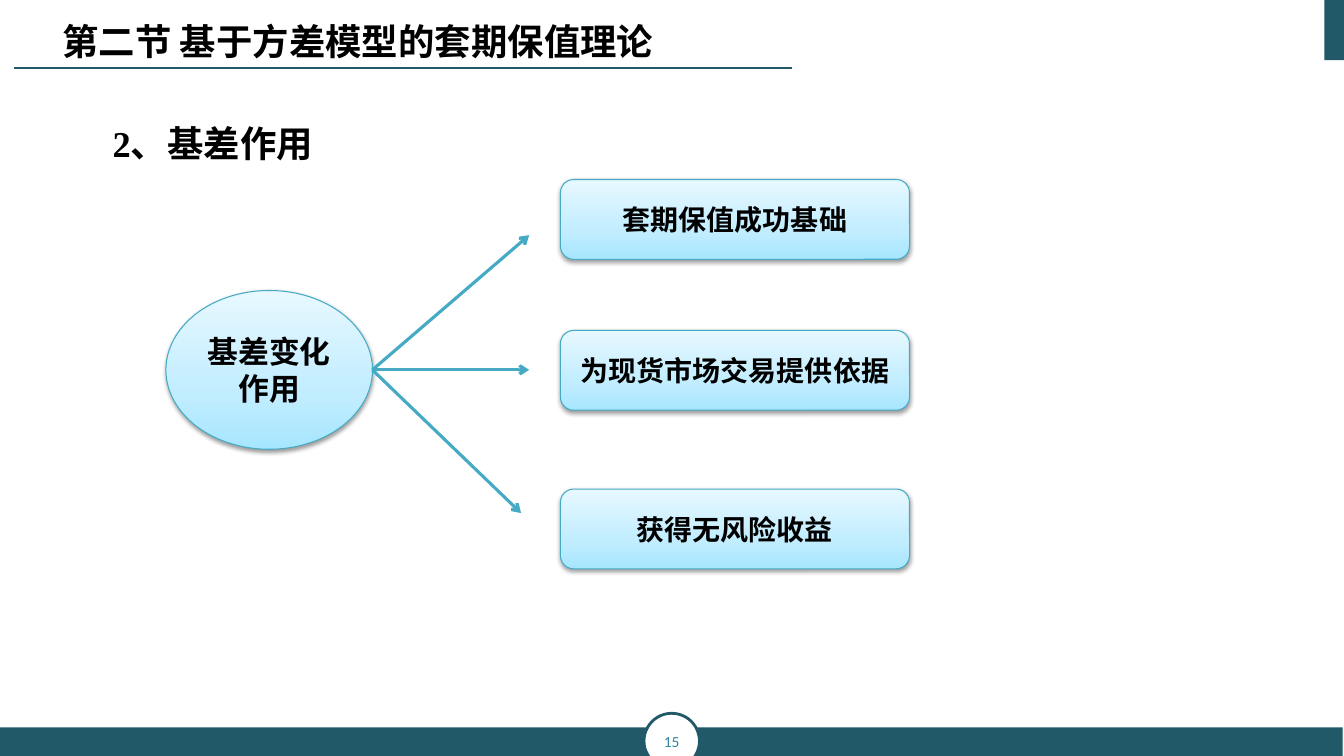
from copy import deepcopy

from lxml.etree import SubElement
from pptx import Presentation
from pptx.dml.color import RGBColor
from pptx.enum.shapes import MSO_CONNECTOR, MSO_SHAPE
from pptx.enum.text import MSO_ANCHOR, MSO_AUTO_SIZE, PP_ALIGN
from pptx.oxml.ns import qn
from pptx.util import Pt

TEAL = RGBColor(0x21, 0x59, 0x68)
NUMBER_TEAL = RGBColor(0x31, 0x85, 0x9C)
EDGE = RGBColor(0x46, 0xAA, 0xC5)
BLACK = RGBColor(0, 0, 0)
WHITE = RGBColor(0xFF, 0xFF, 0xFF)
GRADIENT = [(0, RGBColor(0xA7, 0xE6, 0xFF)),
            (0.35, RGBColor(0xC1, 0xED, 0xFF)),
            (1, RGBColor(0xE7, 0xF8, 0xFF))]
LATIN, SERIF, CJK = "Calibri", "Times New Roman", "Noto Sans CJK SC"


class SlideBuilder:
    def __init__(self, slide):
        self.slide = slide
        self.shapes = slide.shapes

    def set_text(self, sp, text, size, font=LATIN, color=BLACK, bold=True,
                 frame=None, paragraph=None):
        tf = sp.text_frame
        for name, value in {"word_wrap": True, **(frame or {})}.items():
            setattr(tf, name, value)
        p = tf.paragraphs[0]
        for name, value in (paragraph or {}).items():
            setattr(p, name, value)
        r = p.add_run()
        r.text = text
        for name, value in {"name": font, "size": Pt(size), "bold": bold}.items():
            setattr(r.font, name, value)
        r.font.color.rgb = color
        return p

    def title(self, text, box, size):
        sp = self.shapes.title
        for name, value in zip(("left", "top", "width", "height"), box):
            setattr(sp, name, Pt(value))
        p = self.set_text(sp, text, size, CJK,
                          frame={"auto_size": MSO_AUTO_SIZE.NONE,
                                 "vertical_anchor": MSO_ANCHOR.MIDDLE},
                          paragraph={"alignment": PP_ALIGN.LEFT})
        r_pr = p.runs[0]._r.get_or_add_rPr()
        SubElement(r_pr, qn("a:ea"), typeface=CJK)

    def heading(self, text, box, size):
        sp = self.shapes.add_textbox(*map(Pt, box))
        p = self.set_text(sp, text, size, SERIF, frame={"margin_top": Pt(7.2)},
                          paragraph={"line_spacing": 1.5})
        p._p.get_or_add_pPr().set("indent", str(Pt(36)))

    def shape(self, kind, box, fill, line=None, width=0):
        sp = self.shapes.add_shape(kind, *map(Pt, box))
        sp.shadow.inherit = False
        if fill is not None:
            sp.fill.solid()
            sp.fill.fore_color.rgb = fill
        if line is None:
            sp.line.fill.background()
        else:
            sp.line.color.rgb = line
            sp.line.width = Pt(width)
        return sp

    def label(self, sp, text, size, **style):
        self.set_text(sp, text, size, frame={"vertical_anchor": MSO_ANCHOR.MIDDLE},
                      paragraph={"alignment": PP_ALIGN.CENTER}, **style)

    def node(self, kind, box, text, size):
        sp = self.shape(kind, box, None, EDGE, 0.75)
        # Three-stop gradient, darkest at the bottom
        sp.fill.gradient()
        sp.fill.gradient_angle = 90
        first = sp._element.spPr.find(".//" + qn("a:gs"))
        first.addnext(deepcopy(first))
        for stop, (position, color) in zip(sp.fill.gradient_stops, GRADIENT):
            stop.position = position
            stop.color.rgb = color
        # Soft shadow below
        effects = sp._element.spPr.find(qn("a:effectLst"))
        shadow = SubElement(effects, qn("a:outerShdw"), blurRad=str(Pt(3.1)),
                            dist=str(Pt(1.6)), dir="5400000", rotWithShape="0")
        black = SubElement(shadow, qn("a:srgbClr"), val=str(BLACK))
        SubElement(black, qn("a:alpha"), val="38000")
        self.label(sp, text, size)

    def line(self, start, end, color, width, arrow=False):
        cx = self.shapes.add_connector(MSO_CONNECTOR.STRAIGHT, *map(Pt, start + end))
        cx.line.color.rgb = color
        cx.line.width = Pt(width)
        sp_pr = cx._element.spPr
        if arrow:
            SubElement(sp_pr.find(qn("a:ln")), qn("a:tailEnd"), type="arrow")
        SubElement(sp_pr, qn("a:effectLst"))


def main():
    prs = Presentation()
    prs.slide_width, prs.slide_height = Pt(960), Pt(540)
    s = SlideBuilder(prs.slides.add_slide(prs.slide_layouts[5]))

    # Page frame and number
    s.shape(MSO_SHAPE.RECTANGLE, (946, 0, 14, 43), TEAL)
    s.shape(MSO_SHAPE.RECTANGLE, (0, 519.5, 959, 20.5), TEAL)
    badge = s.shape(MSO_SHAPE.OVAL, (460, 509.5, 39.6, 39.6), WHITE, TEAL, 2)
    s.label(badge, "15", 11, color=NUMBER_TEAL, bold=False)
    s.line((566, 48.8), (10, 48.8), TEAL, 1.5)

    # Title and heading
    s.heading("2、基差作用", (37.4, 64, 228, 64), 26)
    s.title("第二节 基于方差模型的套期保值理论", (37.4, 9.4, 561.6, 39), 26)

    # Cause, arrows and effects
    s.node(MSO_SHAPE.OVAL, (118.5, 207.5, 147.6, 113.4), "基差变化作用", 22)
    effects = [("套期保值成功基础", 128.2, (378, 168)),
               ("为现货市场交易提供依据", 236, (378, 264.2)),
               ("获得无风险收益", 349.3, (372.2, 366.5))]
    for text, top, tip in effects:
        s.line((266, 264.2), tip, EDGE, 2.25, arrow=True)
        s.node(MSO_SHAPE.ROUNDED_RECTANGLE, (400.3, top, 249.4, 57), text, 20)

    prs.save("out.pptx")


if __name__ == "__main__":
    main()
